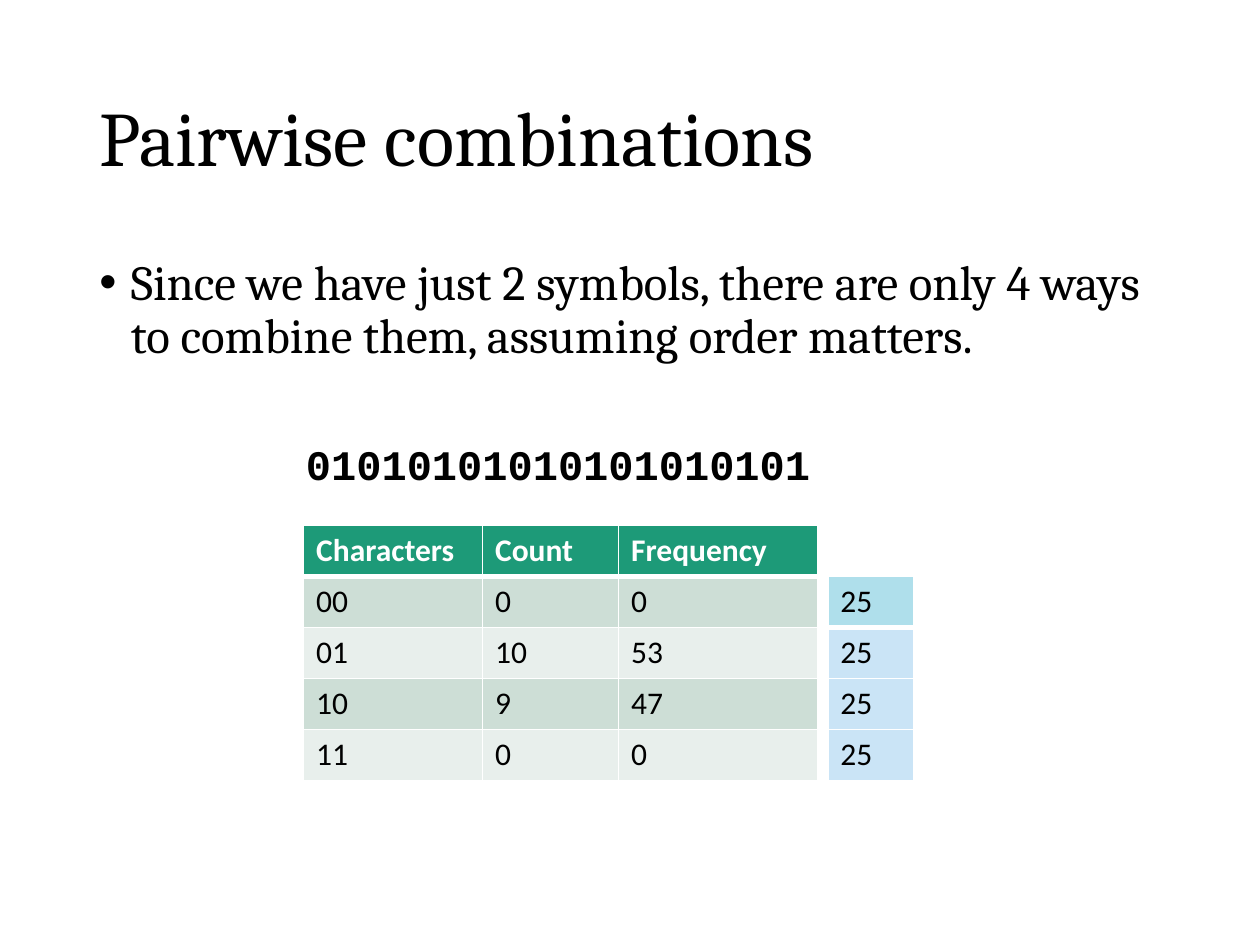
from lxml import etree
from pptx import Presentation
from pptx.dml.color import RGBColor
from pptx.enum.text import MSO_ANCHOR, MSO_AUTO_SIZE, PP_ALIGN
from pptx.oxml.ns import qn
from pptx.util import Inches, Pt

LEFT = PP_ALIGN.LEFT
MIDDLE = MSO_ANCHOR.MIDDLE
TOP = MSO_ANCHOR.TOP
NO_AUTOFIT = MSO_AUTO_SIZE.NONE
FIT_SHAPE = MSO_AUTO_SIZE.SHAPE_TO_FIT_TEXT

COLORS = {
    "text": "000000",
    "white": "FFFFFF",
    "header": "1D9A78",
    "dark_band": "CDDED6",
    "light_band": "E8EFEC",
    "expected_first": "AFDFEB",
    "expected": "CAE4F6",
}
HEADING_FONT, TABLE_FONT, CODE_FONT = "Cambria", "Calibri", "Courier New"

TITLE = "Pairwise combinations"
BULLET = ("Since we have just 2 symbols, there are only 4 ways to combine them, "
          "assuming order matters.")
SEQUENCE = "01010101010101010101"
PAIR_ROWS = [
    ("Characters", "Count", "Frequency"),
    ("00", "0", "0"),
    ("01", "10", "53"),
    ("10", "9", "47"),
    ("11", "0", "0"),
]
PAIR_FILLS = ["header"] + ["dark_band", "light_band"] * 2
PAIR_WIDTHS = [1.42, 1.08, 1.58]
EXPECTED_ROWS = [("25",)] * 4
EXPECTED_FILLS = ["expected_first"] + ["expected"] * 3
EXPECTED_WIDTHS = [0.68]
ROW_HEIGHT = 0.405
TABLE_TOP = 4.17


def add_run(paragraph, text, font, size, color="text", bold=False):
    run = paragraph.add_run()
    run.text = text
    run.font.name = font
    run.font.size = Pt(size)
    run.font.bold = bold
    run.font.color.rgb = RGBColor.from_string(COLORS[color])


def place(shape, left, top, width, height):
    shape.left, shape.top = Inches(left), Inches(top)
    shape.width, shape.height = Inches(width), Inches(height)


def add_bullet(paragraph, indent):
    properties = paragraph._p.get_or_add_pPr()
    properties.set("marL", str(Inches(indent)))
    properties.set("indent", str(-Inches(indent)))
    etree.SubElement(properties, qn("a:buFont"), typeface="Arial")
    etree.SubElement(properties, qn("a:buChar"), char="•")


def set_borders(cell, top, bottom):
    properties = cell._tc.get_or_add_tcPr()
    for side, points in (("L", 1), ("R", 1), ("T", top), ("B", bottom)):
        line = etree.SubElement(properties, qn(f"a:ln{side}"), w=str(Pt(points)))
        fill = etree.SubElement(line, qn("a:solidFill"))
        etree.SubElement(fill, qn("a:srgbClr"), val=COLORS["white"])


def add_banded_table(slide, left, top, widths, rows, fills):
    """Add a table with one fill per row and a thick rule below the first row."""
    table = slide.shapes.add_table(
        len(rows), len(widths), Inches(left), Inches(top),
        Inches(sum(widths)), Inches(ROW_HEIGHT * len(rows))).table
    for column, width in zip(table.columns, widths):
        column.width = Inches(width)
    for row_index, (values, fill) in enumerate(zip(rows, fills)):
        table.rows[row_index].height = Inches(ROW_HEIGHT)
        is_header = fill == "header"
        for column_index, value in enumerate(values):
            cell = table.cell(row_index, column_index)
            set_borders(cell, top=3 if row_index == 1 else 1,
                        bottom=3 if row_index == 0 else 1)
            cell.fill.solid()
            cell.fill.fore_color.rgb = RGBColor.from_string(COLORS[fill])
            add_run(cell.text_frame.paragraphs[0], value, TABLE_FONT, 18,
                    "white" if is_header else "text", is_header)


def main():
    presentation = Presentation()
    presentation.slide_width, presentation.slide_height = Inches(10), Inches(7.5)
    slide = presentation.slides.add_slide(presentation.slide_layouts[5])

    title = slide.shapes.title
    place(title, 0.69, 0.4, 8.62, 1.45)
    title.text_frame.auto_size = NO_AUTOFIT
    title.text_frame.vertical_anchor = MIDDLE
    paragraph = title.text_frame.paragraphs[0]
    paragraph.alignment = LEFT
    paragraph.line_spacing = 0.9
    add_run(paragraph, TITLE, HEADING_FONT, 44)

    body = slide.shapes.add_textbox(
        Inches(0.69), Inches(2), Inches(8.62), Inches(1.42))
    body.text_frame.word_wrap = True
    body.text_frame.vertical_anchor = TOP
    paragraph = body.text_frame.paragraphs[0]
    paragraph.line_spacing = 0.9
    paragraph.space_before = Pt(10)
    add_bullet(paragraph, 0.25)
    add_run(paragraph, BULLET, HEADING_FONT, 28)

    sequence = slide.shapes.add_textbox(
        Inches(2.33), Inches(3.43), Inches(4.23), Inches(0.5))
    sequence.text_frame.word_wrap = False
    sequence.text_frame.auto_size = FIT_SHAPE
    add_run(sequence.text_frame.paragraphs[0], SEQUENCE, CODE_FONT, 24, bold=True)

    add_banded_table(slide, 2.41, TABLE_TOP, PAIR_WIDTHS, PAIR_ROWS, PAIR_FILLS)
    add_banded_table(slide, 6.57, TABLE_TOP + ROW_HEIGHT, EXPECTED_WIDTHS,
                     EXPECTED_ROWS, EXPECTED_FILLS)

    presentation.save("out.pptx")


if __name__ == "__main__":
    main()
